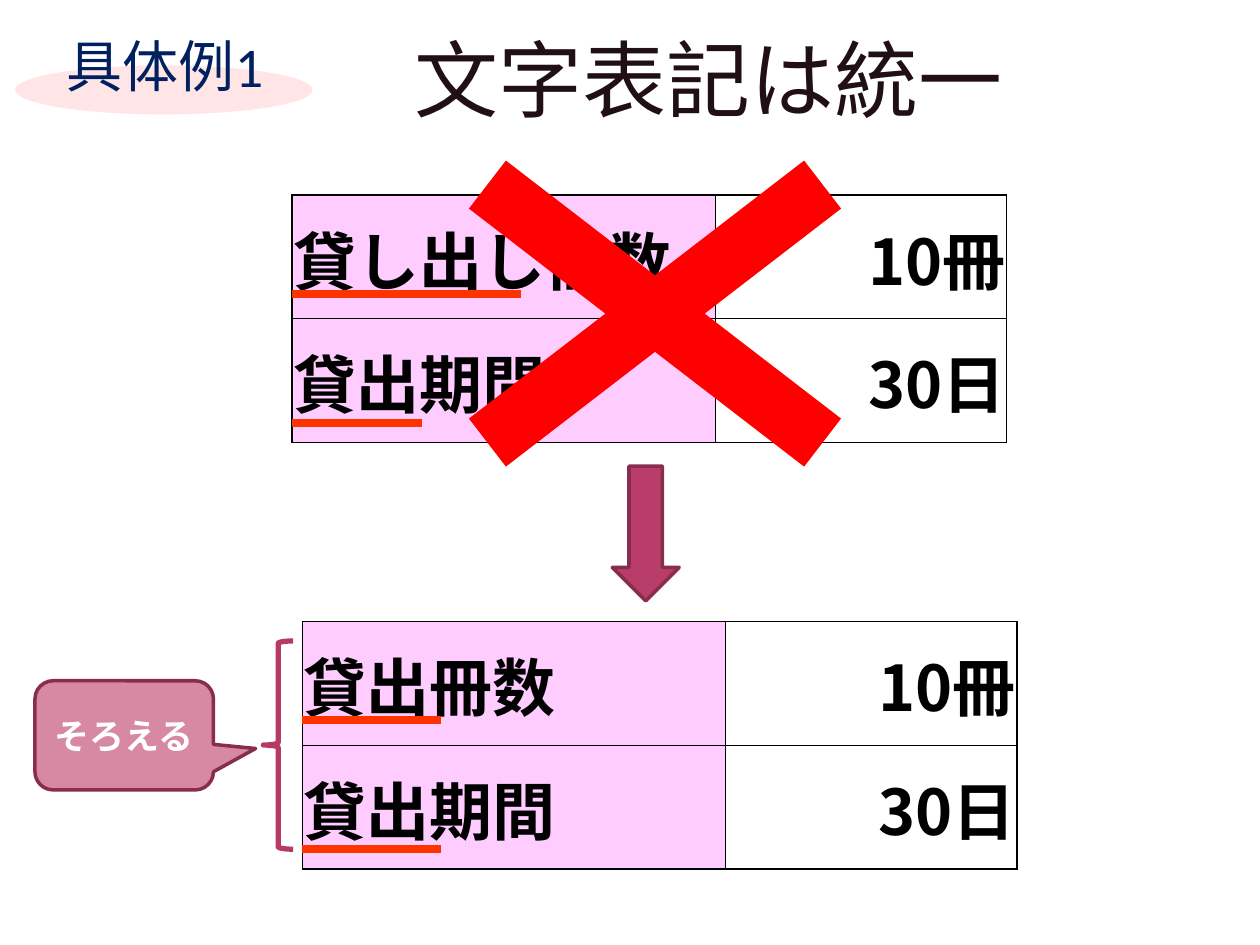
from lxml import etree
from pptx import Presentation
from pptx.dml.color import RGBColor
from pptx.enum import shapes, text
from pptx.oxml import ns
from pptx.util import Pt

COLORS = {
    "title": "210F17", "label": "002060", "ellipse": "FFE5E5",
    "heading_cell": "FFCCFF", "black": "000000", "white": "FFFFFF",
    "underline": "FF3300", "cross": "FF0000", "brace": "B73965",
    "arrow": "B83D68", "callout": "D788A3", "edge": "882D4D",
}
CJK_FONT = "Noto Sans CJK JP"
TABLE_WIDTHS = (242, 166.3)
ROW_HEIGHT = 70.8


def rgb(name):
    return RGBColor.from_string(COLORS[name])


def write(frame, words, size, color, font="Calibri", bold=False,
          align=text.PP_ALIGN.CENTER):
    paragraph = frame.paragraphs[0]
    paragraph.alignment = align
    run = paragraph.add_run()
    run.text = words
    run.font.name = font
    run.font.size = Pt(size)
    run.font.bold = bold
    run.font.color.rgb = rgb(color)
    east_asian = etree.SubElement(run.font._element, ns.qn("a:ea"))
    east_asian.set("typeface", CJK_FONT)
    return paragraph


def add_figure(slide, kind, box, fill=None, edge=None, width=2, adjust=()):
    figure = slide.shapes.add_shape(kind, *map(Pt, box))
    figure.shadow.inherit = False
    if fill:
        figure.fill.solid()
        figure.fill.fore_color.rgb = rgb(fill)
    else:
        figure.fill.background()
    if edge:
        figure.line.color.rgb = rgb(edge)
        figure.line.width = Pt(width)
    else:
        figure.line.fill.background()
    for index, value in enumerate(adjust):
        figure.adjustments[index] = value
    return figure


def add_underline(slide, left, y, length):
    line = slide.shapes.add_connector(
        shapes.MSO_CONNECTOR.STRAIGHT, Pt(left), Pt(y), Pt(left + length), Pt(y))
    line.line.color.rgb = rgb("underline")
    line.line.width = Pt(4.5)
    etree.SubElement(line._element.spPr, ns.qn("a:effectLst"))


def set_borders(cell, widths):
    properties = cell._tc.get_or_add_tcPr()
    for side, width in zip("LRTB", widths):
        border = etree.SubElement(properties, ns.qn(f"a:ln{side}"), w=str(Pt(width)))
        solid = etree.SubElement(border, ns.qn("a:solidFill"))
        etree.SubElement(solid, ns.qn("a:srgbClr"), val=COLORS["black"])


def add_rule_table(slide, left, top, rows):
    table = slide.shapes.add_table(
        len(rows), 2, Pt(left), Pt(top),
        Pt(sum(TABLE_WIDTHS)), Pt(ROW_HEIGHT * len(rows))).table
    table.first_row = table.horz_banding = False
    for column, width in zip(table.columns, TABLE_WIDTHS):
        column.width = Pt(width)
    for r, row in enumerate(rows):
        table.rows[r].height = Pt(ROW_HEIGHT)
        for c, words in enumerate(row):
            cell = table.cell(r, c)
            # Outer borders are 1 pt, inner ones half that
            outer = (c == 0, c == 1, r == 0, r == len(rows) - 1)
            set_borders(cell, [1 if is_outer else 0.5 for is_outer in outer])
            cell.margin_left = cell.margin_right = cell.margin_top = Pt(0.75)
            cell.margin_bottom = 0
            cell.vertical_anchor = text.MSO_ANCHOR.MIDDLE
            if c == 0:
                cell.fill.solid()
                cell.fill.fore_color.rgb = rgb("heading_cell")
            else:
                cell.fill.background()
            align = text.PP_ALIGN.RIGHT if c else text.PP_ALIGN.LEFT
            write(cell.text_frame, words, 36, "black", CJK_FONT, True, align)


def add_title(slide, words):
    title = slide.shapes.title
    title.left, title.top, title.width, title.height = map(Pt, (116, 11.5, 578, 65.5))
    title.text_frame.auto_size = text.MSO_AUTO_SIZE.NONE
    title.text_frame.vertical_anchor = text.MSO_ANCHOR.MIDDLE
    write(title.text_frame, words, 48, "title")


def add_label(slide, words):
    add_figure(slide, shapes.MSO_SHAPE.OVAL, (8.6, 37.4, 170, 28), "ellipse")
    label = slide.shapes.add_textbox(*map(Pt, (19.4, 14.4, 142.6, 41.8)))
    label.text_frame.word_wrap = False
    write(label.text_frame, words, 32, "label").space_before = Pt(6.4)


def main():
    deck = Presentation()
    deck.slide_width, deck.slide_height = Pt(720), Pt(540)
    slide = deck.slides.add_slide(deck.slide_layouts[5])
    add_title(slide, "文字表記は統一")

    # Arrow from the bad example down to the good one
    arrow = add_figure(slide, shapes.MSO_SHAPE.RIGHT_ARROW,
                       (330.5, 285.8, 77, 38.2), "arrow", "edge")
    arrow.rotation = 90

    # Inconsistent and consistent wording
    bad_left, good_left = 167, 172.8
    period = ("貸出期間", "30日")
    add_rule_table(slide, bad_left, 111.4, [("貸し出し冊数", "10冊"), period])
    add_rule_table(slide, good_left, 355, [("貸出冊数", "10冊"), period])

    # Callout and brace joining the consistent rows
    callout = add_figure(slide, shapes.MSO_SHAPE.ROUNDED_RECTANGULAR_CALLOUT,
                         (20, 389, 102, 62.4), "callout", "edge",
                         adjust=(0.736, 0.121, 0.167))
    callout.text_frame.vertical_anchor = text.MSO_ANCHOR.MIDDLE
    write(callout.text_frame, "そろえる", 20, "white", bold=True)
    add_figure(slide, shapes.MSO_SHAPE.LEFT_BRACE, (150.5, 366.3, 17, 119),
               edge="brace", width=3)

    # Underlines below the compared words
    for left, y, length in ((bad_left, 168, 130.5), (bad_left, 241.7, 74),
                            (good_left, 411.5, 79), (good_left, 485.3, 79)):
        add_underline(slide, left, y, length)

    # Cross over the bad example
    add_figure(slide, shapes.MSO_SHAPE.MATH_MULTIPLY, (190, 37.4, 368.6, 283.7),
               "cross", adjust=(0.122,))
    add_label(slide, " 具体例1")
    deck.save("out.pptx")


if __name__ == "__main__":
    main()
